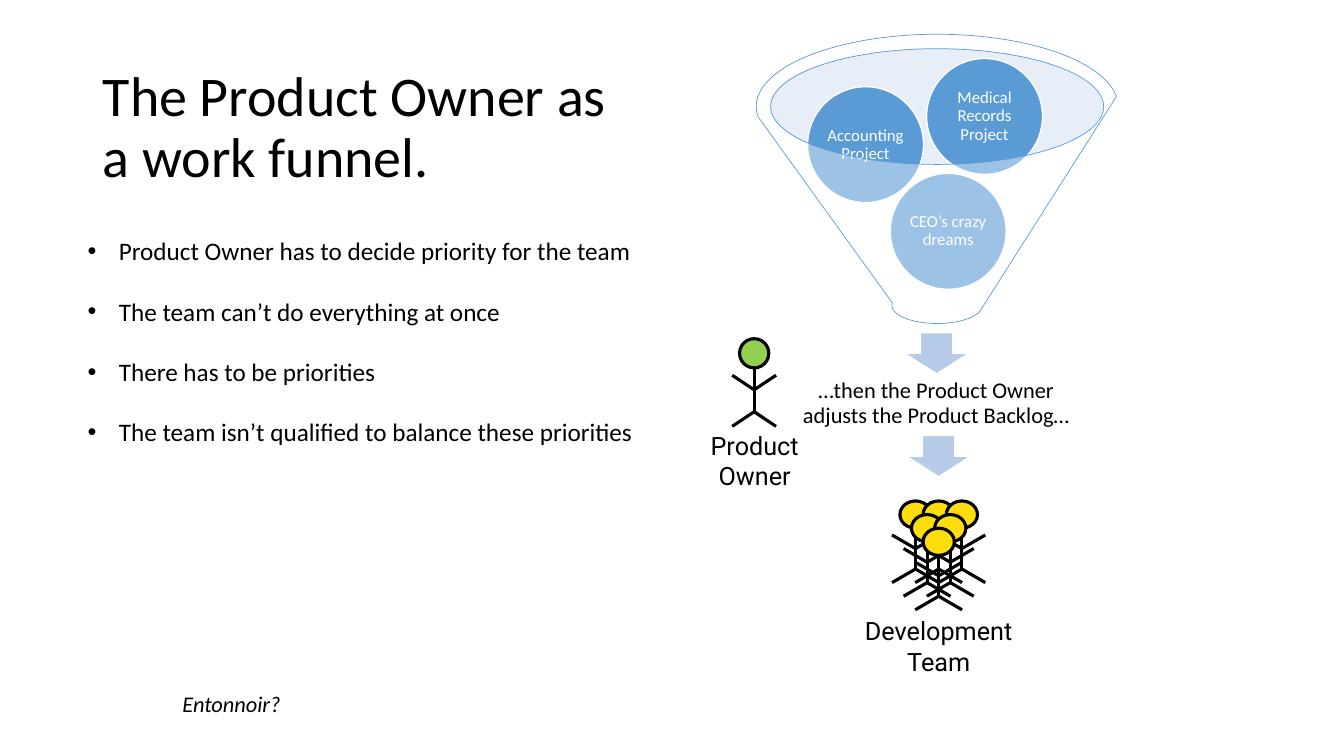
from lxml.etree import SubElement
from pptx import Presentation
from pptx.dml.color import RGBColor
from pptx.enum.shapes import MSO_CONNECTOR, MSO_SHAPE
from pptx.enum.text import MSO_ANCHOR, MSO_AUTO_SIZE, PP_ALIGN
from pptx.oxml.ns import qn
from pptx.util import Inches, Pt

TITLE = "The Product Owner as a work funnel."
BULLETS = [
    "Product Owner has to decide priority for the team",
    "The team can’t do everything at once",
    "There has to be priorities",
    "The team isn’t qualified to balance these priorities",
]
PROJECTS = [
    ("CEO’s crazy dreams", 8.83, 1.72),
    ("Accounting Project", 8.01, 0.86),
    ("Medical Records Project", 9.19, 0.58),
]
RESULT = "…then the Product Owner adjusts the Product Backlog…"
ARROWS = [(8.97, 3.3), (8.99, 4.32)]
OWNER = ["Product", "Owner"]
TEAM = ["Development", "Team"]
QUESTION = "Entonnoir?"
COLORS = {
    "black": "000000", "white": "FFFFFF", "blue": "5B9BD5", "rim": "C4D5EB",
    "arrow": "B5CBE7", "yellow": "FFDC0C", "green": "92D050",
}
TEAM_X, TEAM_Y, TEAM_STEP = 9.31, 4.97, 0.23
TEAM_ROWS = [3, 2, 1]


def rgb(name):
    return RGBColor.from_string(COLORS[name])


def write(sp, lines, size=18, font="Calibri", color="black", align=PP_ALIGN.LEFT,
          anchor=MSO_ANCHOR.TOP, spacing=None, margin=None, wrap=True,
          italic=False, bullet=False, gap=0):
    tf = sp.text_frame
    tf.auto_size = MSO_AUTO_SIZE.NONE
    tf.word_wrap = wrap
    tf.vertical_anchor = anchor
    if margin is not None:
        tf.margin_left = tf.margin_right = Inches(margin)
        tf.margin_top = tf.margin_bottom = Inches(margin)
    for i, line in enumerate(lines):
        p = tf.paragraphs[0] if i == 0 else tf.add_paragraph()
        p.alignment = align
        if spacing:
            p.line_spacing = spacing
        if i and gap:
            p.space_before = Pt(gap)
        if bullet:
            pPr = p._p.get_or_add_pPr()
            pPr.set("marL", str(Inches(0.31)))
            pPr.set("indent", str(-Inches(0.31)))
            SubElement(pPr, qn("a:buFont")).set("typeface", "Arial")
            SubElement(pPr, qn("a:buChar")).set("char", "•")
        r = p.add_run()
        r.text = line
        r.font.size = Pt(size)
        r.font.name = font
        r.font.italic = italic
        r.font.color.rgb = rgb(color)


def add_text(s, x, y, w, h, lines, **fmt):
    sp = s.shapes.add_textbox(Inches(x), Inches(y), Inches(w), Inches(h))
    write(sp, lines, **fmt)


def add_shape(s, kind, x, y, w, h, fill, line=None, width=1, opacity=None):
    sp = s.shapes.add_shape(kind, Inches(x), Inches(y), Inches(w), Inches(h))
    sp.shadow.inherit = False
    sp.fill.solid()
    sp.fill.fore_color.rgb = rgb(fill)
    if opacity:
        clr = sp._element.spPr.find(qn("a:solidFill"))[0]
        SubElement(clr, qn("a:alpha")).set("val", str(opacity * 1000))
    if line:
        sp.line.color.rgb = rgb(line)
        sp.line.width = Pt(width)
    else:
        sp.line.fill.background()
    return sp


def add_limb(s, x1, y1, x2, y2):
    c = s.shapes.add_connector(MSO_CONNECTOR.STRAIGHT, Inches(x1), Inches(y1),
                               Inches(x2), Inches(y2))
    c.line.color.rgb = rgb("black")
    c.line.width = Pt(2.25)
    SubElement(c._element.spPr, qn("a:effectLst"))


def add_person(s, x, y, w, h, fill):
    add_shape(s, MSO_SHAPE.OVAL, x - w / 2, y, w, h, fill, "black", 2.25)
    add_limb(s, x, y + h, x, y + 2.5 * h)
    for joint, tip in [(2.5, 3), (1.75, 1.25)]:
        for side in (-1, 1):
            add_limb(s, x, y + joint * h, x + side * 0.75 * w, y + tip * h)


def main():
    prs = Presentation()
    prs.slide_width, prs.slide_height = Inches(13.33), Inches(7.5)
    s = prs.slides.add_slide(prs.slide_layouts[5])

    title = s.shapes.title
    title.left, title.top = Inches(0.92), Inches(0.4)
    title.width, title.height = Inches(5.57), Inches(1.76)
    write(title, [TITLE], size=40, anchor=MSO_ANCHOR.MIDDLE, spacing=0.9)
    add_text(s, 0.77, 2.29, 5.78, 3.74, BULLETS, bullet=True, gap=21.5)
    add_text(s, 1.71, 6.8, 1.21, 0.37, [QUESTION], size=16, italic=True, wrap=False)

    centred = {"align": PP_ALIGN.CENTER, "anchor": MSO_ANCHOR.MIDDLE, "spacing": 0.9}
    add_shape(s, MSO_SHAPE.OVAL, 7.63, 0.48, 3.31, 1.15, "rim", opacity=40)
    for name, x, y in PROJECTS:
        ball = add_shape(s, MSO_SHAPE.OVAL, x, y, 1.15, 1.15, "blue", "white")
        write(ball, [name], size=12, color="white", margin=0.02, **centred)
    add_shape(s, MSO_SHAPE.FUNNEL, 7.5, 0.34, 3.59, 2.87, "white", "blue", 0.5, 40)
    for x, y in ARROWS:
        add_shape(s, MSO_SHAPE.DOWN_ARROW, x, y, 0.64, 0.41, "arrow", "white")
    add_text(s, 7.75, 3.62, 3.07, 0.77, [RESULT], size=16, margin=0.12, **centred)

    caption = {"font": "Roboto", "align": PP_ALIGN.CENTER, "wrap": False}
    add_person(s, 7.48, 3.36, 0.29, 0.29, "green")
    add_text(s, 6.77, 4.22, 1.43, 0.97, OWNER, **caption)

    head_w, head_h = 0.31, 0.27
    for row, count in enumerate(TEAM_ROWS):
        for i in range(count):
            x = TEAM_X + (i - (count - 1) / 2) * TEAM_STEP
            add_person(s, x, TEAM_Y + row * head_h / 2, head_w, head_h, "yellow")
    add_text(s, 8.1, 6.06, 2.42, 1.05, TEAM, **caption)

    prs.save("out.pptx")


if __name__ == "__main__":
    main()
